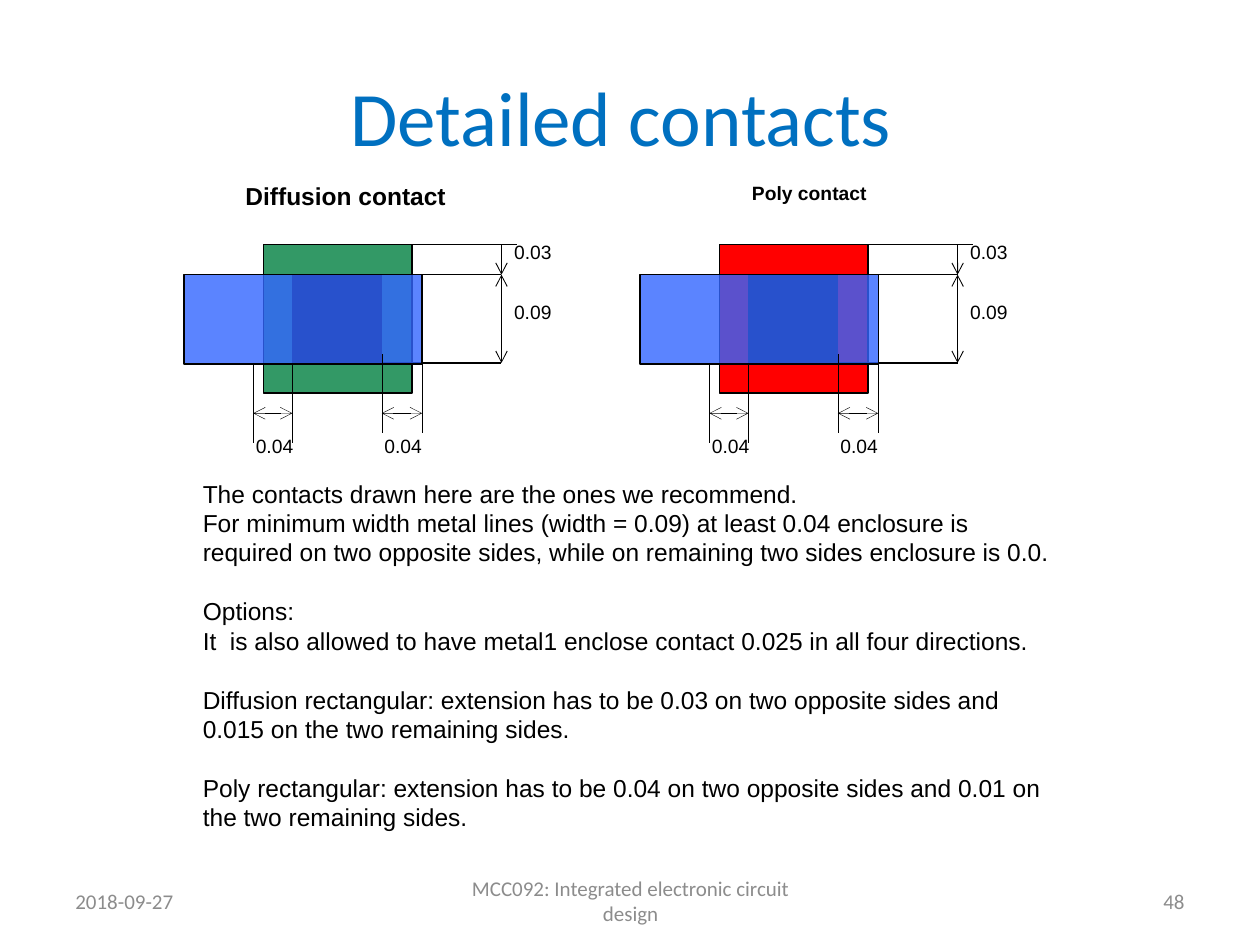
from dataclasses import dataclass
from lxml.etree import SubElement
from pptx import Presentation
from pptx.dml.color import RGBColor
from pptx.enum.shapes import MSO_CONNECTOR, MSO_SHAPE
from pptx.enum.text import MSO_ANCHOR, PP_ALIGN
from pptx.oxml.ns import qn
from pptx.util import Inches, Pt


@dataclass(frozen=True)
class Theme:
    black: str = "000000"
    grey: str = "8C8C8C"
    title: str = "0070C0"
    diffusion: str = "339966"
    poly: str = "FF0000"
    metal: str = "3366FF"
    body_font: str = "Arial"
    head_font: str = "Calibri"
    title_size: int = 44
    body_size: int = 14
    footer_size: int = 12
    label_size: int = 11
    leading: float = 16.8
    outline: float = 0.75
    dimension: float = 0.5
    hairline: float = 0.25


class ContactSlide:
    """Draws styled elements on the current slide."""

    def __init__(self, slide, theme):
        self.slide, self.theme = slide, theme
        self.shapes = slide.shapes

    def start_group(self):
        self.shapes = self.slide.shapes.add_group_shape().shapes

    def end_group(self):
        self.shapes = self.slide.shapes

    def text(self, box, paragraphs, size, font=None, color=None, bold=False,
             align=PP_ALIGN.LEFT, anchor=MSO_ANCHOR.TOP,
             insets=(0.1, 0.05, 0.1, 0.05)):
        tf = self.shapes.add_textbox(*map(Inches, box)).text_frame
        tf.word_wrap = True
        tf.vertical_anchor = anchor
        tf.margin_left, tf.margin_top, tf.margin_right, tf.margin_bottom = map(Inches, insets)
        for i, content in enumerate(paragraphs):
            p = tf.add_paragraph() if i else tf.paragraphs[0]
            p.text = content
            p.alignment = align
            p.font.size = Pt(size)
            p.font.name = font or self.theme.body_font
            p.font.bold = bold
            p.font.color.rgb = RGBColor.from_string(color or self.theme.black)
        return tf

    def label(self, box, value, pad=0.05):
        self.text(box, [value], self.theme.label_size, insets=(0.02, pad, 0.02, pad))

    def rect(self, box, color, opacity=100):
        sp = self.shapes.add_shape(MSO_SHAPE.RECTANGLE, *map(Inches, box))
        sp.shadow.inherit = False
        sp.fill.solid()
        sp.fill.fore_color.rgb = RGBColor.from_string(color)
        sp.line.color.rgb = RGBColor.from_string(self.theme.black)
        sp.line.width = Pt(self.theme.outline)
        if opacity < 100:
            clr = sp._element.spPr.find(qn("a:solidFill"))[0]
            SubElement(clr, qn("a:alpha"), val=str(opacity * 1000))

    def line(self, x1, y1, x2, y2, width, arrows=()):
        c = self.shapes.add_connector(MSO_CONNECTOR.STRAIGHT, *map(Inches, (x1, y1, x2, y2)))
        c.line.color.rgb = RGBColor.from_string(self.theme.black)
        c.line.width = Pt(width)
        ln = c._element.spPr.find(qn("a:ln"))
        for end in arrows:
            SubElement(ln, qn(f"a:{end}"), type="arrow")
        SubElement(c._element.spPr, qn("a:effectLst"))

    def contact(self, x, layer):
        t = self.theme
        both = ("headEnd", "tailEnd")
        top, cut_top, cut_bottom, size = 1.94, 2.18, 2.88, 1.18
        cut_left, cut_right, metal_right, dim = x + 0.86, x + 1.57, x + 1.89, x + 2.52
        self.label((x + 2.6, 1.86, 0.55, 0.41), "0.03")
        self.start_group()
        self.rect((x + 0.63, top, size, size), layer)
        self.line(dim, top, dim, cut_top, t.dimension, both[1:])
        self.line(dim, cut_bottom, dim, cut_top, t.dimension, both)
        self.rect((cut_left, cut_top, 0.71, 0.71), t.black)
        self.label((x + 2.6, 2.33, 0.53, 0.39), "0.09")
        for x1, x2, y in ((cut_right, dim, cut_top), (x + 1.81, x + 2.64, top),
                          (x + 1.41, dim, cut_bottom)):
            self.line(x1, y, x2, y, t.outline)
        self.rect((x, cut_top, 1.89, 0.71), t.metal, 80)
        for left, right, y1, y2 in ((cut_right, metal_right, 2.81, 3.44),
                                    (x + 0.55, cut_left, cut_bottom, 3.52)):
            for edge in (right, left):
                self.line(edge, y1, edge, y2, t.hairline)
            self.line(right, 3.28, left, 3.28, t.hairline, both)
            self.label((left, 3.44, 0.48, 0.24), "0.04", 0.01)
        self.end_group()

    def body(self, box, sections):
        t = self.theme
        lines = [line for section in sections for line in section]
        tf = self.text(box, lines, t.body_size, insets=(0, 0.05, 0.1, 0.05))
        openers = [section[0] for section in sections[1:]]
        for p in tf.paragraphs:
            p.line_spacing = Pt(t.leading)
            if p.text in openers:
                p.space_before = Pt(t.leading)

    def footer(self, left, width, content, align):
        t = self.theme
        self.text((left, 6.95, width, 0.4), [content], t.footer_size, t.head_font,
                  t.grey, align=align, anchor=MSO_ANCHOR.MIDDLE)


SECTIONS = [
    ["The contacts drawn here are the ones we recommend.",
     "For minimum width metal lines (width = 0.09) at least 0.04 enclosure is required "
     "on two opposite sides, while on remaining two sides enclosure is 0.0."],
    ["Options:",
     "It  is also allowed to have metal1 enclose contact 0.025 in all four directions."],
    ["Diffusion rectangular: extension has to be 0.03 on two opposite sides and 0.015 "
     "on the two remaining sides."],
    ["Poly rectangular: extension has to be 0.04 on two opposite sides and 0.01 "
     "on the two remaining sides."],
]


def main():
    prs = Presentation()
    prs.slide_width, prs.slide_height = Inches(10), Inches(7.5)
    t = Theme()
    s = ContactSlide(prs.slides.add_slide(prs.slide_layouts[6]), t)
    s.text((0.43, 0.29, 9, 1.25), ["Detailed contacts"], t.title_size, t.head_font,
           t.title, align=PP_ALIGN.CENTER, anchor=MSO_ANCHOR.MIDDLE)
    s.text((1.85, 1.39, 2.13, 0.42), ["Diffusion contact"], t.body_size, bold=True)
    s.text((5.87, 1.39, 1.14, 0.42), ["Poly contact"], t.label_size, bold=True)
    s.contact(1.46, t.diffusion)
    s.contact(5.08, t.poly)
    s.body((1.61, 3.75, 6.93, 3.07), SECTIONS)
    s.footer(0.5, 2.33, "2018-09-27", PP_ALIGN.LEFT)
    s.footer(3.42, 3.17, "MCC092: Integrated electronic circuit design", PP_ALIGN.CENTER)
    s.footer(7.17, 2.33, "48", PP_ALIGN.RIGHT)
    prs.save("out.pptx")


if __name__ == "__main__":
    main()
